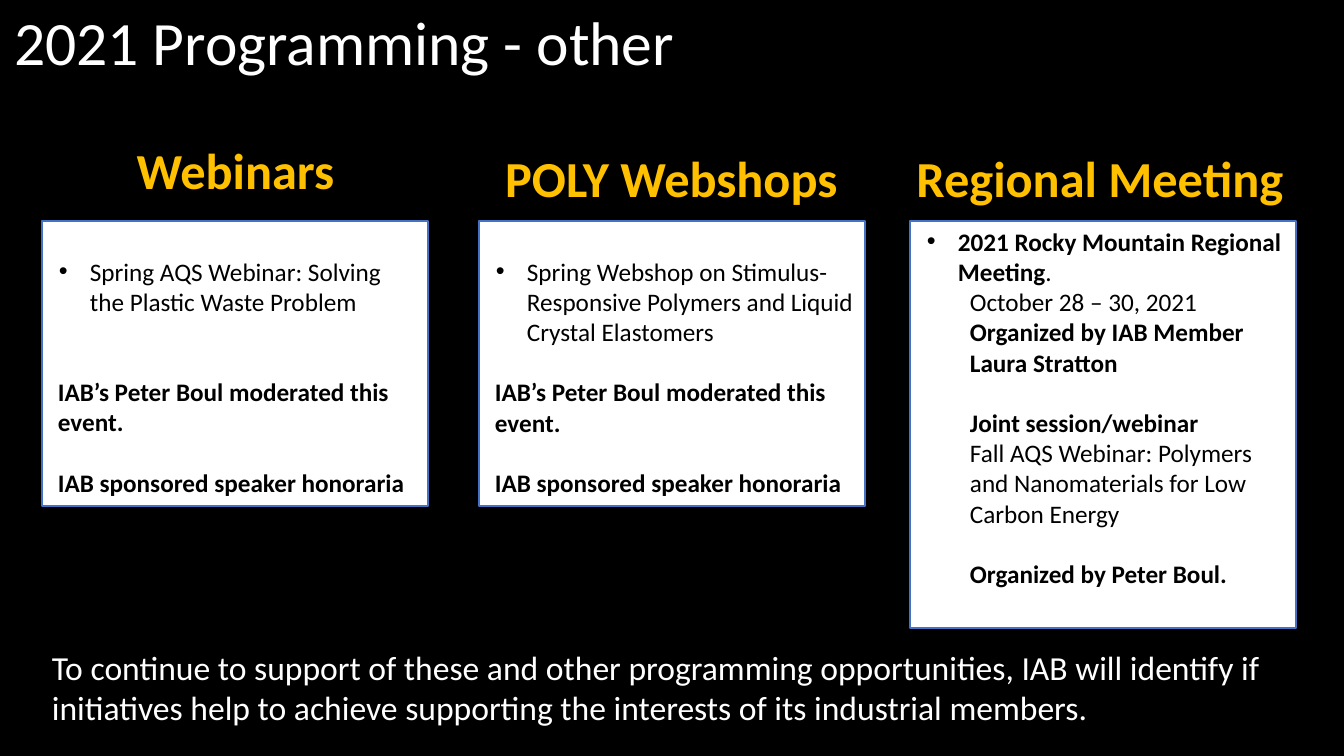
from pptx import Presentation
from pptx.dml.color import RGBColor
from pptx.enum.shapes import MSO_SHAPE as Shape
from pptx.enum.text import MSO_ANCHOR as Anchor, MSO_AUTO_SIZE as Fit, PP_ALIGN as Align
from pptx.util import Pt
from lxml.etree import SubElement

PX = 914400 / 100.8
LINE = 30
WHITE, BLACK, GOLD, BLUE = "FFFFFF", "000000", "FFC000", "4472C4"
BULLET, FLUSH, INNER = (38, -31, "•"), (6, 0, ""), (50, 0, "")

TITLE = "2021 Programming - other"
HEADS = [
    ("Webinars", (125, 134, 221, 72)),
    ("POLY Webshops", (493, 142, 357, 72)),
    ("Regional Meeting", (904, 142, 392, 72)),
]
HOST = "IAB’s Peter Boul moderated this event."
FUND = "IAB sponsored speaker honoraria"

# Paragraph: indent style, blank lines above, runs of (text, bold)
CARDS = [
    ((42, 221, 386, 285), 1, [
        (BULLET, 0, [("Spring AQS Webinar: Solving the Plastic Waste Problem", False)]),
        (FLUSH, 2, [(HOST, True)]),
        (FLUSH, 1, [(FUND, True)]),
    ]),
    ((479, 221, 386, 285), 1, [
        (BULLET, 0, [("Spring Webshop on Stimulus-Responsive Polymers and "
                      "Liquid Crystal Elastomers", False)]),
        (FLUSH, 1, [(HOST, True)]),
        (FLUSH, 1, [(FUND, True)]),
    ]),
    ((910, 221, 386, 407), 0, [
        (BULLET, 0, [("2021 Rocky Mountain Regional Meeting", True), (".", False)]),
        (INNER, 0, [("October 28 – 30, 2021", False)]),
        (INNER, 0, [("Organized by IAB Member Laura Stratton", True)]),
        (INNER, 1, [("Joint session/webinar", True)]),
        (INNER, 0, [("Fall AQS Webinar: Polymers and Nanomaterials for Low "
                     "Carbon Energy", False)]),
        (INNER, 1, [("Organized by Peter Boul.", True)]),
    ]),
]
CLOSE = ("To continue to support of these and other programming opportunities, IAB will "
         "identify if initiatives help to achieve supporting the interests of its "
         "industrial members.")


def px(n):
    return round(n * PX)


def color(code):
    return RGBColor.from_string(code)


def write(para, text, size, code, bold=False):
    run = para.add_run()
    run.text = text
    font = run.font
    font.name, font.size, font.bold = "Calibri", Pt(size), bold
    font.color.rgb = color(code)


def label(slide, box, text, size, code, bold=False, wrap=True):
    frame = slide.shapes.add_textbox(*map(px, box)).text_frame
    frame.word_wrap = wrap
    para = frame.paragraphs[0]
    para.alignment = Align.LEFT if wrap else Align.CENTER
    write(para, text, size, code, bold)


def indent(para, left, hang, mark):
    props = para._p.get_or_add_pPr()
    props.set("marL", str(px(left)))
    props.set("indent", str(px(hang)))
    if mark:
        space = "{http://schemas.openxmlformats.org/drawingml/2006/main}"
        SubElement(props, space + "buFont", typeface="Arial")
        SubElement(props, space + "buChar", char=mark)


def card(slide, box, skip, paras):
    rect = slide.shapes.add_shape(Shape.RECTANGLE, *map(px, box))
    rect.shadow.inherit = False
    rect.fill.solid()
    rect.fill.fore_color.rgb = color(WHITE)
    rect.line.color.rgb = color(BLUE)
    rect.line.width = Pt(1)
    frame = rect.text_frame
    frame.word_wrap = True
    frame.vertical_anchor = Anchor.TOP
    frame.margin_top = px(5 + skip * LINE)
    for i, (style, gap, runs) in enumerate(paras):
        para = frame.add_paragraph() if i else frame.paragraphs[0]
        para.alignment = Align.LEFT
        para.space_before = px(gap * LINE)
        indent(para, *style)
        for text, bold in runs:
            write(para, text, 18, BLACK, bold)


def main():
    deck = Presentation()
    deck.slide_width, deck.slide_height = px(1344), px(756)
    slide = deck.slides.add_slide(deck.slide_layouts[5])
    slide.background.fill.solid()
    slide.background.fill.fore_color.rgb = color(BLACK)

    title = slide.shapes.title
    title.left, title.top, title.width, title.height = map(px, (4, -27, 1159, 146))
    frame = title.text_frame
    frame.auto_size = Fit.NONE
    frame.vertical_anchor = Anchor.MIDDLE
    para = frame.paragraphs[0]
    para.alignment, para.line_spacing = Align.LEFT, 0.9
    write(para, TITLE, 44, WHITE)

    for text, box in HEADS:
        label(slide, box, text, 36, GOLD, True, False)
    for item in CARDS:
        card(slide, *item)
    label(slide, (42, 642, 1283, 92), CLOSE, 24, WHITE)
    deck.save("out.pptx")


if __name__ == "__main__":
    main()
